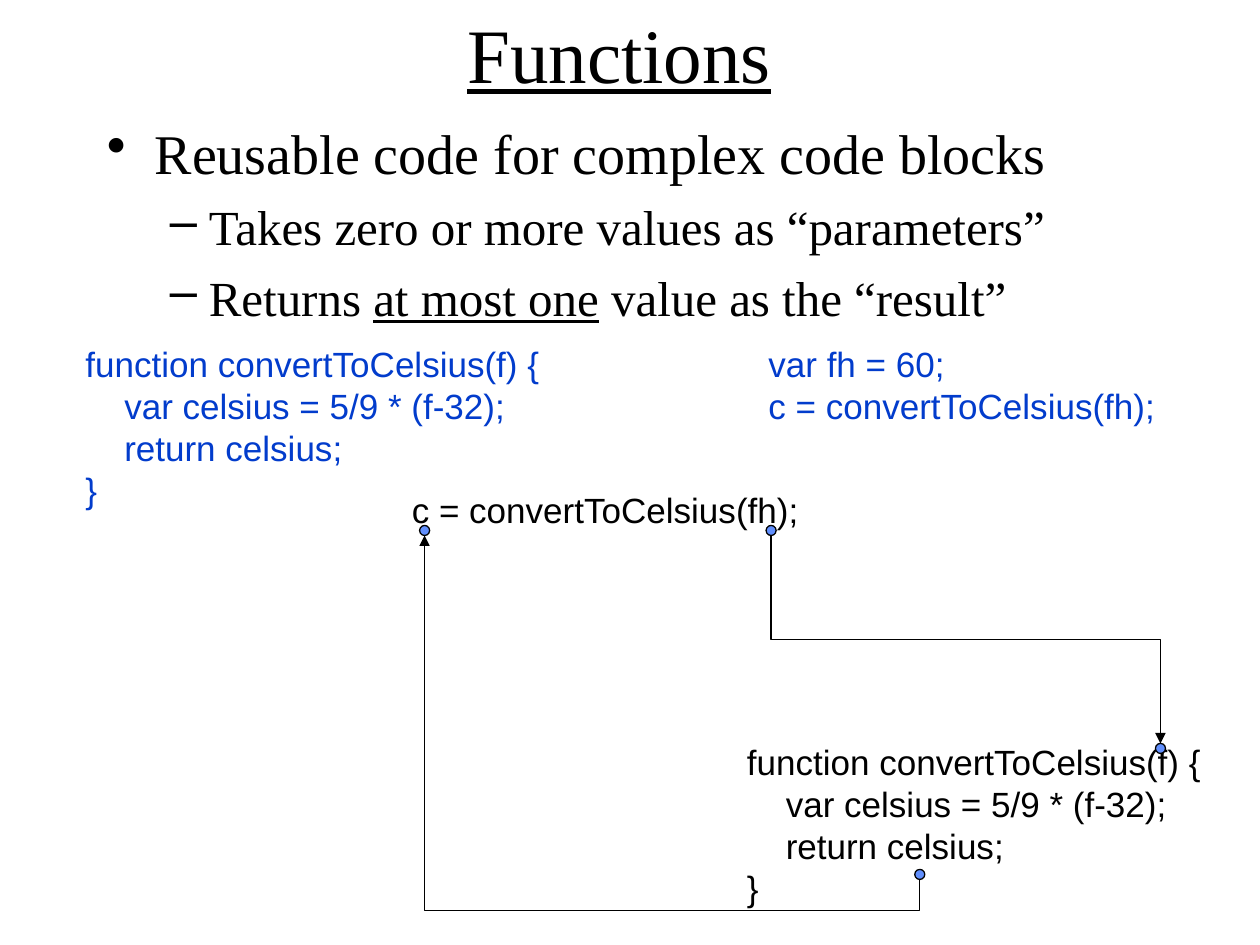
from lxml import etree
from pptx import Presentation
from pptx.dml.color import RGBColor
from pptx.enum.shapes import MSO_CONNECTOR, MSO_SHAPE
from pptx.enum.text import MSO_ANCHOR, PP_ALIGN
from pptx.oxml.ns import qn
from pptx.util import Inches, Pt

ELBOW = MSO_CONNECTOR.ELBOW
OVAL = MSO_SHAPE.OVAL
MIDDLE = MSO_ANCHOR.MIDDLE
CENTER = PP_ALIGN.CENTER
BLACK, BLUE, DOT = "000000", "023CCC", "618FFD"
SERIF, SANS = "Times New Roman", "Arial"
SIZE = 0.08

CALL = "c = convertToCelsius(fh);"
CODE = [
    "function convertToCelsius(f) {",
    "    var celsius = 5/9 * (f-32);",
    "    return celsius;",
    "}",
]
POINTS = [
    (0, [("Reusable code for complex code blocks", False)]),
    (1, [("Takes zero or more values as “parameters”", False)]),
    (1, [("Returns ", False), ("at most one", True),
         (" value as the “result”", False)]),
]
LEVELS = [("•", 32, 0.38, 0.38), ("–", 28, 0.81, 0.31)]


def color(value):
    return RGBColor.from_string(value)


def inches(*values):
    return [Inches(value) for value in values]


class Deck:
    def __init__(self):
        self.prs = Presentation()
        self.prs.slide_width, self.prs.slide_height = inches(10, 7.5)
        self.slide = self.prs.slides.add_slide(self.prs.slide_layouts[5])
        self.shapes = self.slide.shapes

    def style(self, para, font, size, tone):
        para.font.name = font
        para.font.size = Pt(size)
        para.font.color.rgb = color(tone)

    def title(self, text, *box):
        shape = self.shapes.title
        shape.left, shape.top, shape.width, shape.height = inches(*box)
        frame = shape.text_frame
        frame.text = text
        frame.vertical_anchor = MIDDLE
        para = frame.paragraphs[0]
        para.alignment = CENTER
        self.style(para, SERIF, 44, BLACK)
        para.font.underline = True

    def points(self, items, *box):
        frame = self.shapes.add_textbox(*inches(*box)).text_frame
        frame.word_wrap = True
        for i, (level, runs) in enumerate(items):
            para = frame.add_paragraph() if i else frame.paragraphs[0]
            mark, size, left, hang = LEVELS[level]
            para.level = level
            if i:
                para.space_before = Pt(6.5)
            props = para._p.get_or_add_pPr()
            props.set("marL", str(Inches(left)))
            props.set("indent", str(-Inches(hang)))
            etree.SubElement(props, qn("a:buChar"), char=mark)
            self.style(para, SERIF, size, BLACK)
            for text, under in runs:
                run = para.add_run()
                run.text = text
                if under:
                    run.font.underline = True

    def code(self, lines, tone, *box):
        frame = self.shapes.add_textbox(*inches(*box)).text_frame
        frame.word_wrap = False
        frame.text = "\n".join(lines)
        for para in frame.paragraphs:
            self.style(para, SANS, 20, tone)

    def dot(self, x, y):
        shape = self.shapes.add_shape(
            OVAL, *inches(x - SIZE / 2, y - SIZE / 2, SIZE, SIZE))
        shape.shadow.inherit = False
        shape.fill.solid()
        shape.fill.fore_color.rgb = color(DOT)
        shape.line.color.rgb = color(BLACK)
        shape.line.width = Pt(0.75)

    def bend(self, x1, y1, x2, y2, ratio):
        mid_x, mid_y = (x1 + x2) / 2, (y1 + y2) / 2
        half_w, half_h = abs(y2 - y1) / 2, abs(x2 - x1) / 2
        link = self.shapes.add_connector(ELBOW, *inches(
            mid_x + half_w, mid_y - half_h, mid_x - half_w, mid_y + half_h))
        link.line.color.rgb = color(BLACK)
        link.line.width = Pt(0.75)
        props = link._element.spPr
        turn = 270 if y2 > y1 else 90
        props.find(qn("a:xfrm")).set("rot", str(turn * 60000))
        guides = props.find(qn("a:prstGeom")).find(qn("a:avLst"))
        etree.SubElement(guides, qn("a:gd"), name="adj1",
                         fmla=f"val {round(ratio * 100000)}")
        etree.SubElement(props.find(qn("a:ln")), qn("a:tailEnd"),
                         type="triangle")
        etree.SubElement(props, qn("a:effectLst"))


def main():
    deck = Deck()
    deck.title("Functions", 0.5, 0, 8.83, 0.83)
    deck.points(POINTS, 0.75, 0.89, 8.5, 1.75)
    deck.code(CODE, BLUE, 0.58, 2.67, 3.83, 1.43)
    deck.code(["var fh = 60;", CALL], BLUE, 6, 2.67, 3.29, 0.77)
    deck.code([CALL], BLACK, 3.17, 3.83, 3.29, 0.44)
    deck.code(CODE, BLACK, 5.83, 5.83, 3.83, 1.43)
    deck.bend(6.12, 4.25, 9.21, 5.9, 0.5)
    deck.bend(7.3, 6.98, 3.37, 4.25, -0.09)
    for x, y in [(6.12, 4.21), (9.21, 5.94), (7.3, 6.94), (3.37, 4.21)]:
        deck.dot(x, y)
    deck.prs.save("out.pptx")


if __name__ == "__main__":
    main()
